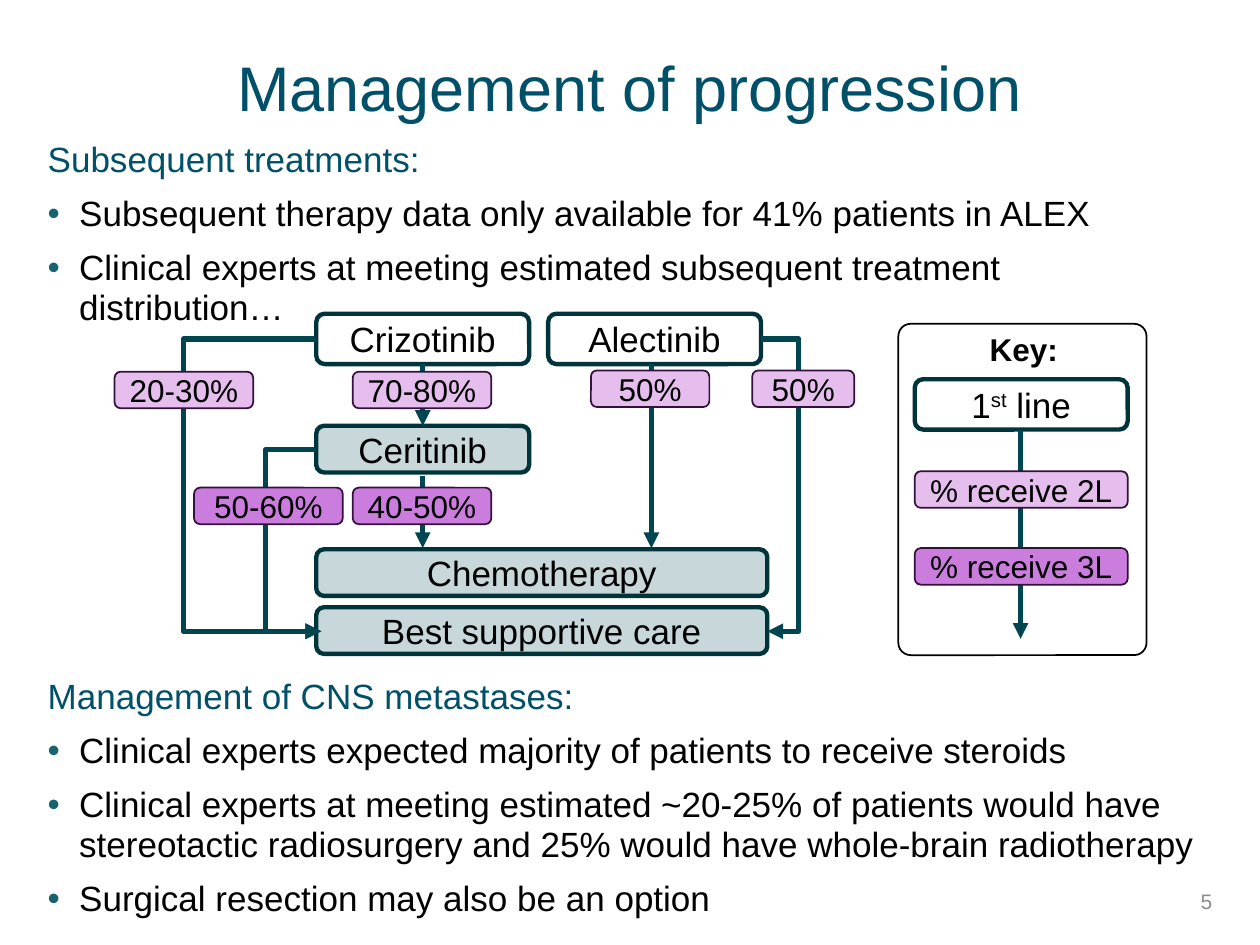
from dataclasses import dataclass

from lxml import etree
from pptx import Presentation, util as u
from pptx.dml.color import RGBColor
from pptx.enum import shapes, text
from pptx.oxml.ns import qn

Inches = u.Inches


@dataclass(frozen=True)
class Theme:
    font: str = "Arial"
    heading: str = "00506A"
    black: str = "000000"
    muted: str = "8C8C8C"
    bullet: str = "18646E"
    arrow: str = "004650"
    box_line: str = "00343B"
    box_fill: str = "C7D7DA"
    label_line: str = "34103D"
    second: str = "E5BEEE"
    third: str = "CA7DDD"
    title_size: int = 36
    body_size: int = 20
    label_size: int = 18
    small_size: int = 12


T = Theme()
CENTER, RIGHT = text.PP_ALIGN.CENTER, text.PP_ALIGN.RIGHT
MIDDLE, TOP = text.MSO_ANCHOR.MIDDLE, text.MSO_ANCHOR.TOP


def rgb(value):
    return RGBColor.from_string(value)


def add_run(p, words, size=T.body_size, color=T.black, bold=False, raised=False):
    r = p.add_run()
    r.text = words
    r.font.name, r.font.size, r.font.bold = T.font, u.Pt(size), bold
    r.font.color.rgb = rgb(color)
    if raised:
        r.font._element.set("baseline", "30000")


def add_text(s, box, words, align=None, anchor=TOP, spacing=None, **fmt):
    sp = s.shapes.add_textbox(*map(Inches, box))
    tf = sp.text_frame
    tf.word_wrap, tf.vertical_anchor = True, anchor
    p = tf.paragraphs[0]
    p.alignment, p.line_spacing = align, spacing
    add_run(p, words, **fmt)
    return tf


def add_bullet(p):
    pPr = p._p.get_or_add_pPr()
    pPr.set("marL", str(Inches(0.25)))
    pPr.set("indent", str(-Inches(0.25)))
    color = etree.SubElement(pPr, qn("a:buClr"))
    etree.SubElement(color, qn("a:srgbClr"), val=T.bullet)
    etree.SubElement(pPr, qn("a:buFont"), typeface=T.font)
    etree.SubElement(pPr, qn("a:buChar"), char="•")


def section(s, box, heading, bullets):
    tf = add_text(s, box, heading, spacing=0.95, color=T.heading)
    tf.paragraphs[0].space_after = u.Pt(8)
    for words in bullets:
        p = tf.add_paragraph()
        p.line_spacing, p.space_after = 0.95, u.Pt(8)
        add_bullet(p)
        add_run(p, words)


def rounded(s, box, fill, line, width, runs=(), size=T.body_size, corner=None):
    """Rounded box; runs are (words, raised) pairs on one line."""
    sp = s.shapes.add_shape(shapes.MSO_SHAPE.ROUNDED_RECTANGLE, *map(Inches, box))
    sp.shadow.inherit = False
    if corner is not None:
        sp.adjustments[0] = corner
    if fill:
        sp.fill.solid()
        sp.fill.fore_color.rgb = rgb(fill)
    else:
        sp.fill.background()
    sp.line.color.rgb, sp.line.width = rgb(line), u.Pt(width)
    tf = sp.text_frame
    tf.margin_left = tf.margin_right = tf.margin_top = tf.margin_bottom = 0
    tf.vertical_anchor = MIDDLE
    p = tf.paragraphs[0]
    p.alignment = CENTER
    for words, raised in runs:
        add_run(p, words, size=size, raised=raised)


def treatment(s, box, *runs, fill=None):
    rounded(s, box, fill, T.box_line, 2.5, runs)


def share(s, box, words, fill):
    rounded(s, box, fill, T.label_line, 1, [(words, False)], T.label_size)


def arrow(s, start, end, via_x=None):
    """Arrow from start to end; via_x is where an elbow runs down."""
    kind = shapes.MSO_CONNECTOR.STRAIGHT if via_x is None else shapes.MSO_CONNECTOR.ELBOW
    cx = s.shapes.add_connector(kind, *map(Inches, (*start, *end)))
    cx.line.color.rgb, cx.line.width = rgb(T.arrow), u.Pt(3)
    spPr = cx._element.spPr
    if via_x is not None:
        ratio = (via_x - start[0]) / (end[0] - start[0])
        guides = spPr.find(qn("a:prstGeom")).get_or_add_avLst()
        etree.SubElement(guides, qn("a:gd"), name="adj1", fmla=f"val {round(ratio * 100000)}")
    etree.SubElement(cx.line._get_or_add_ln(), qn("a:tailEnd"), type="triangle")
    etree.SubElement(spPr, qn("a:effectLst"))


def pathway(s, box):
    x, y, w, h = box
    left, col, full = x + 1.6, 1.69, 3.58
    right = left + full
    mid, alectinib = left + col / 2, left + 1.84
    care_y = y + 2.52

    treatment(s, (left, y, col, 0.4), ("Crizotinib", False))
    treatment(s, (alectinib, y, col, 0.4), ("Alectinib", False))
    for words, top, width in (("Ceritinib", 0.89, col), ("Chemotherapy", 1.87, full),
                              ("Best supportive care", 2.33, full)):
        treatment(s, (left, y + top, width, 0.37), (words, False), fill=T.box_fill)

    arrow(s, (mid, y + 0.4), (mid, y + 0.89))
    arrow(s, (mid, y + 1.29), (mid, y + 1.86))
    arrow(s, (alectinib + 0.82, y + 0.4), (alectinib + 0.82, y + 1.86))
    arrow(s, (alectinib + col, y + 0.2), (right, care_y), via_x=x + 5.43)
    arrow(s, (left, y + 0.2), (left + 0.04, care_y), via_x=x + 0.55)
    arrow(s, (left, y + 1.08), (left + 0.04, care_y), via_x=x + 1.2)

    for words, dx, dy, width, fill in (
            ("20-30%", 0, 0.46, 1.1, T.second), ("70-80%", 1.89, 0.46, 1.1, T.second),
            ("50%", 3.78, 0.45, 0.94, T.second), ("50%", 5.06, 0.45, 0.81, T.second),
            ("50-60%", 0.63, 1.38, 1.18, T.third), ("40-50%", 1.89, 1.38, 1.1, T.third)):
        share(s, (x + dx, y + dy, width, 0.29), words, fill)


def key(s, box):
    x, y, w, h = box
    inner_x, inner_w = x + 0.13, w - 0.28
    rounded(s, box, None, T.black, 1, corner=0.05)
    add_text(s, (x + 0.3, y, 1.39, 0.38), "Key:", align=CENTER,
             size=T.label_size, bold=True)
    treatment(s, (inner_x, y + 0.44, inner_w, 0.4),
              ("1", False), ("st", True), (" line", False))
    arrow(s, (x + 0.97, y + 0.84), (x + 0.97, y + 2.5))
    share(s, (inner_x, y + 1.17, inner_w, 0.29), "% receive 2L", T.second)
    share(s, (inner_x, y + 1.78, inner_w, 0.29), "% receive 3L", T.third)


def main():
    prs = Presentation()
    prs.slide_width, prs.slide_height = Inches(10), Inches(7.5)
    s = prs.slides.add_slide(prs.slide_layouts[6])
    add_text(s, (0.27, 0.21, 9.45, 1.03), "Management of progression", align=CENTER,
             anchor=MIDDLE, spacing=0.9, size=T.title_size, color=T.heading)
    section(s, (0.28, 1.07, 9.45, 0.94), "Subsequent treatments:", [
        "Subsequent therapy data only available for 41% patients in ALEX",
        "Clinical experts at meeting estimated subsequent treatment distribution…"])
    pathway(s, (0.91, 2.49, 5.87, 2.71))
    key(s, (7.13, 2.57, 1.97, 2.63))
    section(s, (0.28, 5.33, 9.45, 2.03), "Management of CNS metastases:", [
        "Clinical experts expected majority of patients to receive steroids",
        "Clinical experts at meeting estimated ~20-25% of patients would have "
        "stereotactic radiosurgery and 25% would have whole-brain radiotherapy",
        "Surgical resection may also be an option"])
    add_text(s, (7.47, 6.95, 2.25, 0.4), "5", align=RIGHT, anchor=MIDDLE,
             size=T.small_size, color=T.muted)
    prs.save("out.pptx")


if __name__ == "__main__":
    main()
